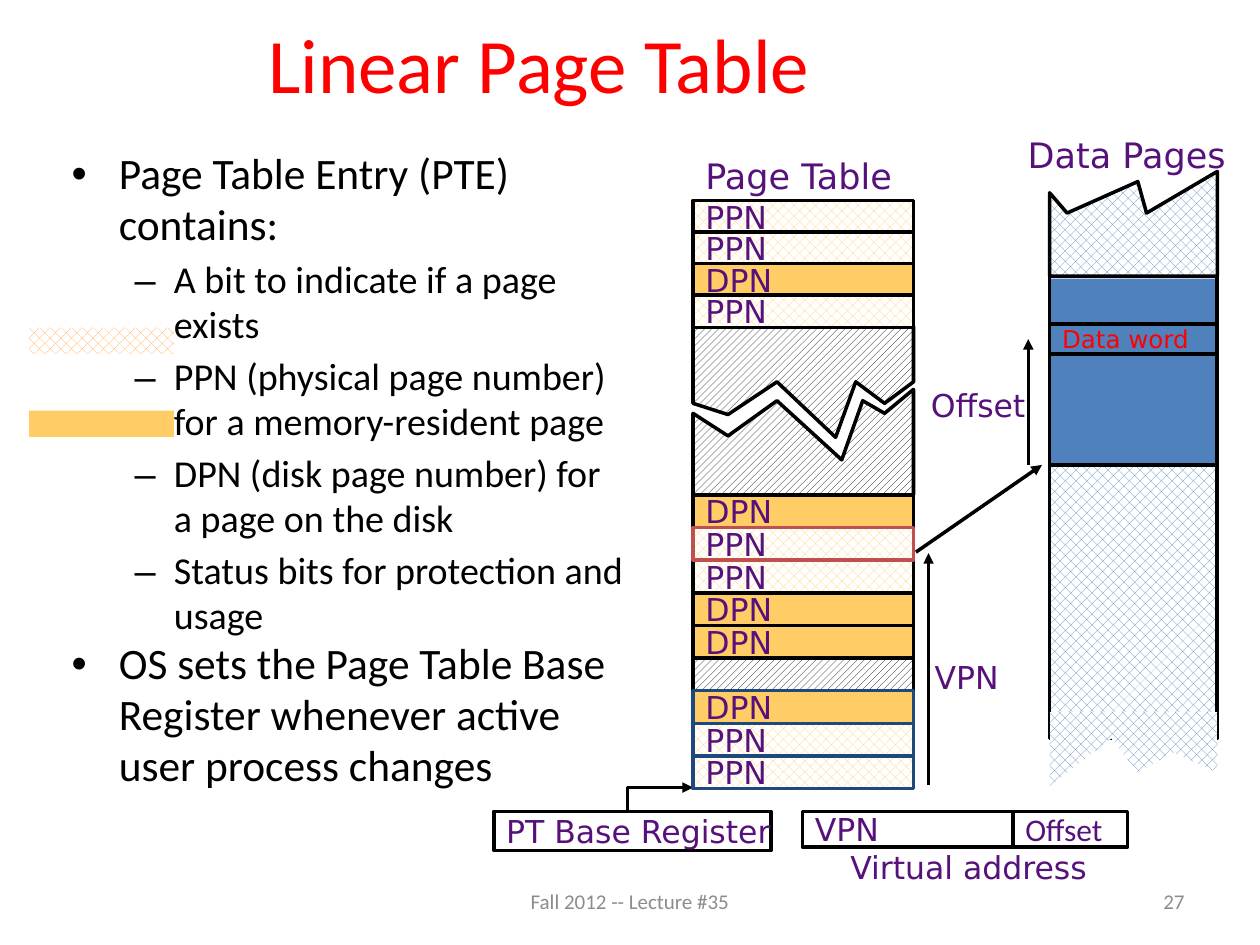
from dataclasses import dataclass

from lxml.etree import SubElement
from pptx import Presentation
from pptx.dml.color import RGBColor
from pptx.enum.dml import MSO_PATTERN
from pptx.enum.shapes import MSO_CONNECTOR, MSO_SHAPE
from pptx.enum.text import MSO_ANCHOR, MSO_AUTO_SIZE, PP_ALIGN
from pptx.oxml.ns import qn
from pptx.util import Pt


@dataclass(frozen=True)
class Theme:
    """Colours, fonts and type sizes of the slide."""
    black: str = "000000"
    white: str = "FFFFFF"
    red: str = "FF0000"
    purple: str = "56127A"
    grey: str = "8C8C8C"
    amber: str = "FFCC66"
    orange: str = "FFA74F"
    blue: str = "4F81BD"
    navy: str = "1F497D"
    brick: str = "C0504D"
    text_font: str = "Calibri"
    label_font: str = "DejaVu Sans"
    title_size: float = 44
    body_size: float = 24.8
    detail_size: float = 21.7
    heading_size: float = 20
    label_size: float = 18
    word_size: float = 14
    footer_size: float = 12
    line_width: float = 2


@dataclass(frozen=True)
class Box:
    """A rectangle in points."""
    left: float
    top: float
    width: float
    height: float

    def inner(self, left, top, width, height):
        """Return a box placed relative to this one."""
        return Box(self.left + left, self.top + top, width, height)

    def points(self):
        """Return the position and size as lengths."""
        return Pt(self.left), Pt(self.top), Pt(self.width), Pt(self.height)


THEME = Theme()
DOTS = MSO_PATTERN.from_xml("pct40")
STRIPES = MSO_PATTERN.from_xml("wdUpDiag")


def add_run(paragraph, text, size, color, font):
    """Add one formatted run to a paragraph."""
    run = paragraph.add_run()
    run.text = text
    run.font.size = Pt(size)
    run.font.name = font
    run.font.color.rgb = RGBColor.from_string(color)


def style(shape, fill=None, line=None, pattern=None):
    """Set the fill and outline of a shape and remove its shadow."""
    shape.shadow.inherit = False
    if fill is None:
        shape.fill.background()
    elif pattern is None:
        shape.fill.solid()
        shape.fill.fore_color.rgb = RGBColor.from_string(fill)
    else:
        shape.fill.patterned()
        shape.fill.pattern = pattern
        shape.fill.fore_color.rgb = RGBColor.from_string(fill)
        shape.fill.back_color.rgb = RGBColor.from_string(THEME.white)
    if line is None:
        shape.line.fill.background()
    else:
        shape.line.color.rgb = RGBColor.from_string(line)
        shape.line.width = Pt(THEME.line_width)


def add_block(slide, box, fill=None, line=None, pattern=None, text=None,
              size=THEME.label_size, color=THEME.purple, font=THEME.label_font):
    """Add a rectangle with an optional left-aligned label."""
    shape = slide.shapes.add_shape(MSO_SHAPE.RECTANGLE, *box.points())
    style(shape, fill, line, pattern)
    if text:
        frame = shape.text_frame
        frame.word_wrap = False
        frame.vertical_anchor = MSO_ANCHOR.MIDDLE
        frame.paragraphs[0].alignment = PP_ALIGN.LEFT
        add_run(frame.paragraphs[0], text, size, color, font)


def add_label(slide, box, text, size=THEME.label_size):
    """Add an unwrapped diagram label."""
    frame = slide.shapes.add_textbox(*box.points()).text_frame
    frame.word_wrap = False
    frame.auto_size = MSO_AUTO_SIZE.SHAPE_TO_FIT_TEXT
    frame.vertical_anchor = MSO_ANCHOR.MIDDLE
    add_run(frame.paragraphs[0], text, size, THEME.purple, THEME.label_font)


def add_line_of_text(slide, box, text, size, color, alignment):
    """Add a wrapped line of text such as the title or footer."""
    frame = slide.shapes.add_textbox(*box.points()).text_frame
    frame.word_wrap = True
    frame.vertical_anchor = MSO_ANCHOR.MIDDLE
    frame.paragraphs[0].alignment = alignment
    add_run(frame.paragraphs[0], text, size, color, THEME.text_font)


def add_outline(slide, box, vertices, closed=True):
    """Add a freeform whose vertices are relative to the box."""
    corners = [(Pt(box.left + x), Pt(box.top + y)) for x, y in vertices]
    builder = slide.shapes.build_freeform(*corners[0])
    builder.add_line_segments(corners[1:], close=closed)
    return builder.convert_to_shape()


def add_arrowhead(shape):
    """Put a triangle at the end of a line."""
    SubElement(shape.line._get_or_add_ln(), qn("a:tailEnd"), type="triangle")


def add_arrow(slide, box, start, end):
    """Add a straight arrow between two points relative to the box."""
    ends = [Pt(value) for x, y in (start, end) for value in (box.left + x, box.top + y)]
    connector = slide.shapes.add_connector(MSO_CONNECTOR.STRAIGHT, *ends)
    connector.line.color.rgb = RGBColor.from_string(THEME.black)
    connector.line.width = Pt(THEME.line_width)
    add_arrowhead(connector)
    SubElement(connector._element.spPr, qn("a:effectLst"))


def add_body(slide, box):
    """Add the two-level bullet list."""
    top = (THEME.body_size, 27, -27, "•")
    detail = (THEME.detail_size, 58.5, -22.5, "–")
    items = [
        (top, 5, "Page Table Entry (PTE) contains:"),
        (detail, 4.3, "A bit to indicate if a page exists"),
        (detail, 4.3, "PPN (physical page number) for a memory-resident page"),
        (detail, 4.3, "DPN (disk page number) for a page on the disk"),
        (detail, 4.3, "Status bits for protection and usage"),
        (top, 0, "OS sets the Page Table Base Register whenever active user process changes"),
    ]
    frame = slide.shapes.add_textbox(*box.points()).text_frame
    frame.word_wrap = True
    for index, ((size, margin, indent, bullet), space, text) in enumerate(items):
        paragraph = frame.add_paragraph() if index else frame.paragraphs[0]
        paragraph.level = int(bullet == "–")
        paragraph.line_spacing = 0.98
        paragraph.space_before = Pt(space)
        properties = paragraph._p.get_or_add_pPr()
        properties.set("marL", str(Pt(margin)))
        properties.set("indent", str(Pt(indent)))
        SubElement(properties, qn("a:buFont"), typeface="Arial")
        SubElement(properties, qn("a:buChar"), char=bullet)
        add_run(paragraph, text, size, THEME.black, THEME.text_font)


def add_legend(slide, box):
    """Add the two swatches that key the entry kinds."""
    add_block(slide, box.inner(0, 0, box.width, 15), THEME.orange, pattern=DOTS)
    add_block(slide, box.inner(0, box.height - 15, box.width, 15), THEME.amber)


def add_entry(slide, box, top, kind, line=THEME.black):
    """Add one page table row of the given kind."""
    fill, pattern = {"PPN": (THEME.amber, DOTS), "DPN": (THEME.amber, None),
                     "": (THEME.black, STRIPES)}[kind]
    add_block(slide, box.inner(0, top, box.width, 18.7), fill, line, pattern, kind)


def add_page_table(slide, box):
    """Add the page table with its torn middle, index arrow and page link."""
    right = box.width
    lower_top = 168.3
    for vertices in (
        [(0, lower_top), (right, lower_top), (right, 108), (109.5, 121.7), (97, 114.5),
         (85, 148.3), (48, 114.5), (20, 134.6), (0, 121.7)],
        [(0, 116), (0, 72), (right, 72), (right, 103.7), (109.5, 116), (93, 103.7),
         (81.5, 135.4), (48, 103.7), (20, 122.4)],
    ):
        style(add_outline(slide, box, vertices), THEME.black, THEME.black, STRIPES)
    for row, kind in enumerate(("PPN", "PPN", "DPN", "PPN")):
        add_entry(slide, box, row * 18, kind)
    lower_rows = [(0, "DPN", THEME.black), (2, "PPN", THEME.black), (3, "DPN", THEME.black),
                  (4, "DPN", THEME.black), (5, "", THEME.black), (8, "PPN", THEME.navy),
                  (7, "PPN", THEME.navy), (6, "DPN", THEME.navy), (1, "PPN", THEME.brick)]
    for row, kind, line in lower_rows:
        add_entry(slide, box, lower_top + row * 18.65, kind, line)
    add_label(slide, box.inner(0, -29.5, 124, 31), "Page Table", THEME.heading_size)
    add_label(slide, box.inner(131, 257.8, 51, 28.8), "VPN")
    add_arrow(slide, box, (134.6, 334), (134.6, 201.6))
    add_arrow(slide, box, (127.4, 201), (199.4, 151.2))


def add_data_pages(slide, box):
    """Add the torn column of data pages with the word offset."""
    right = box.width
    add_block(slide, box.inner(0.7, 61.2, right - 1.4, 105.8), THEME.blue)
    add_block(slide, box.inner(0, 23.8, right, 144), line=THEME.black)
    add_block(slide, box.inner(0, 87.1, right, 17.3), line=THEME.black,
              text="Data word", size=THEME.word_size, color=THEME.red)
    add_block(slide, box.inner(0, 167.8, right, 156.2), THEME.blue, THEME.black, DOTS)
    bottom_edge = [(0, 309), (0, box.height), (35.3, 324), (50.4, 343.4), (70.6, 332),
                   (right, 343.4), (right, 309)]
    style(add_outline(slide, box, bottom_edge), THEME.blue, pattern=DOTS)
    top_edge = [(0, 59.8), (right, 59.8), (right, 0), (55.4, 23.8), (50.4, 5.8),
                (10, 23.8), (0, 12.2)]
    style(add_outline(slide, box, top_edge), THEME.blue, THEME.black, DOTS)
    add_label(slide, box.inner(-19.6, -25.2, 127.5, 31), "Data Pages", THEME.heading_size)
    add_arrow(slide, box, (-12.2, 167.8), (-12.2, 95.8))
    add_label(slide, box.inner(-75, 118.8, 68.4, 28.8), "Offset")


def add_register(slide, box):
    """Add the base register and its elbow arrow to the page table."""
    add_block(slide, box, THEME.white, THEME.black, text="PT Base Register")
    elbow = add_outline(slide, box, [(76.4, -0.7), (76.4, -13.7), (113.8, -13.7)], False)
    style(elbow, line=THEME.black)
    add_arrowhead(elbow)


def add_virtual_address(slide, box):
    """Add the two address fields and their caption."""
    split = 120.2
    add_block(slide, box.inner(0, 0, split, box.height), THEME.white, THEME.black, text="VPN")
    add_block(slide, box.inner(split, 0, box.width - split, box.height), THEME.white,
              THEME.black, text="Offset", font=THEME.text_font)
    add_label(slide, box.inner(20.2, 17.3, 150.5, 28.8), "Virtual address")


def main():
    """Build the slide and save it."""
    presentation = Presentation()
    presentation.slide_width, presentation.slide_height = Pt(720), Pt(540)
    slide = presentation.slides.add_slide(presentation.slide_layouts[6])
    add_line_of_text(slide, Box(26, 0, 564, 72), "Linear Page Table",
                     THEME.title_size, THEME.red, PP_ALIGN.CENTER)
    add_virtual_address(slide, Box(458.6, 463.7, 185.8, 20.2))
    add_register(slide, Box(282.2, 463.7, 158.4, 22.3))
    add_data_pages(slide, Box(599.8, 98, 95.8, 351.3))
    add_page_table(slide, Box(396, 114.5, 126, 336.2))
    add_body(slide, Box(33.8, 81.4, 329.8, 374.4))
    add_legend(slide, Box(16.6, 187.2, 82.8, 62.5))
    add_line_of_text(slide, Box(246, 500.5, 228, 28.8), "Fall 2012 -- Lecture #35",
                     THEME.footer_size, THEME.grey, PP_ALIGN.CENTER)
    add_line_of_text(slide, Box(516, 500.5, 168, 28.8), "27",
                     THEME.footer_size, THEME.grey, PP_ALIGN.RIGHT)
    presentation.save("out.pptx")


if __name__ == "__main__":
    main()
